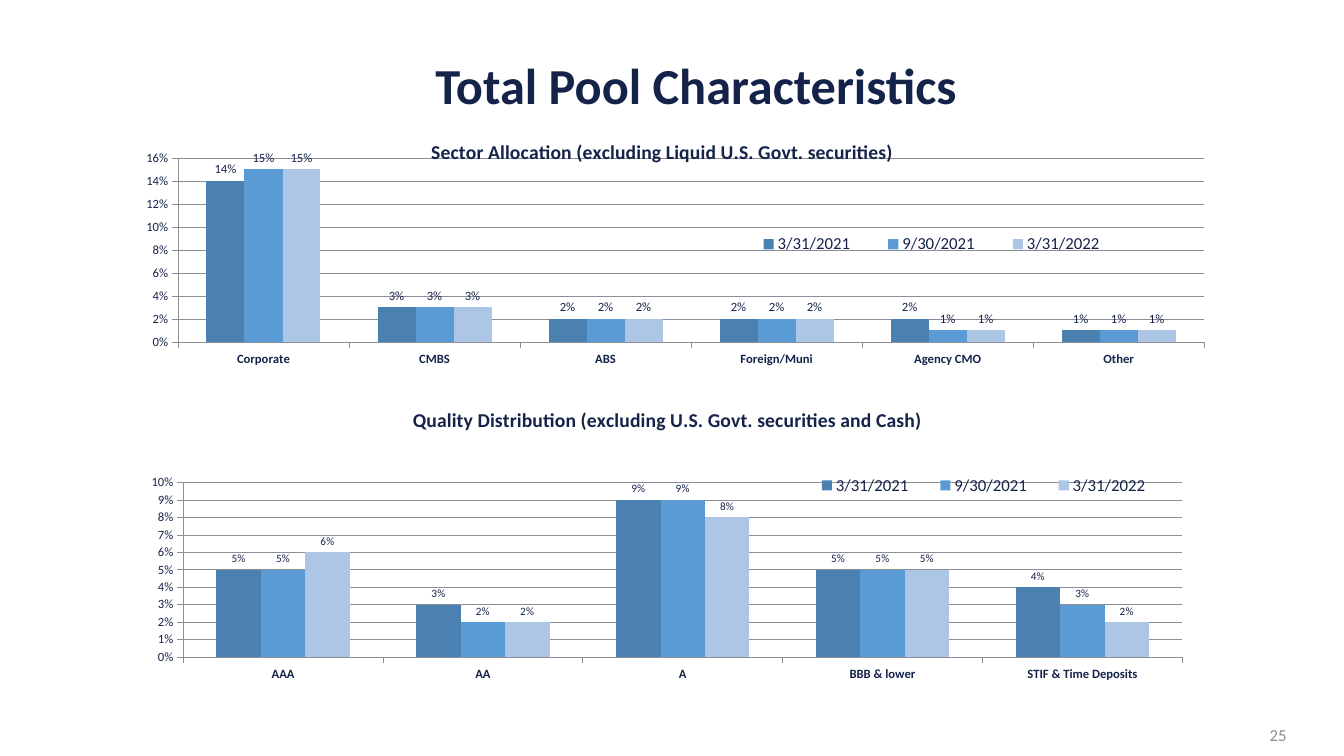
"""Build the Total Pool Characteristics slide with two clustered column charts."""
from dataclasses import dataclass

import pptx
import pptx.chart.data
import pptx.dml.color
import pptx.enum.chart
import pptx.enum.text
import pptx.oxml
import pptx.oxml.ns
import pptx.util

SLIDE_SIZE = (13.33, 7.5)
TITLE = {"text": "Total Pool Characteristics", "area": (15.6, 9.73, 72.39, 3.87)}
PAGE_NUMBER = {"text": "25", "area": (73.97, 94.53, 22.51, 5.33)}
DATES = ("3/31/2021", "9/30/2021", "3/31/2022")
LEGEND = pptx.enum.chart.XL_LEGEND_POSITION
CHARTS = [
    {
        "title": "Sector Allocation (excluding Liquid U.S. Govt. securities)",
        "area": (6.68, 15.87, 85.22, 39.6),
        "rows": {
            "Corporate": (0.14, 0.15, 0.15),
            "CMBS": (0.03, 0.03, 0.03),
            "ABS": (0.02, 0.02, 0.02),
            "Foreign/Muni": (0.02, 0.02, 0.02),
            "Agency CMO": (0.02, 0.01, 0.01),
            "Other": (0.01, 0.01, 0.01),
        },
        "scale": (0.16, 0.02),
        "label_size": 9,
        "legend": LEGEND.BOTTOM,
        "title_spot": (29.5, 5),
        "plot_spot": (7.7, 12.7, 89.6, 61.5),
        "legend_spot": (56, 37.5, 35, 8),
    },
    {
        "title": "Quality Distribution (excluding U.S. Govt. securities and Cash)",
        "area": (9.68, 51.33, 79.89, 39.6),
        "rows": {
            "AAA": (0.05, 0.05, 0.06),
            "AA": (0.03, 0.02, 0.02),
            "A": (0.09, 0.09, 0.08),
            "BBB & lower": (0.05, 0.05, 0.05),
            "STIF & Time Deposits": (0.04, 0.03, 0.02),
        },
        "scale": (0.1, 0.01),
        "label_size": 8,
        "legend": LEGEND.TOP,
        "title_spot": (26, 5),
        "plot_spot": (4.95, 31.6, 93.05, 58.3),
        "legend_spot": (62, 28.5, 35, 8),
    },
]


@dataclass(frozen=True)
class Theme:
    font: str = "Calibri"
    ink: str = "15234A"
    grey: str = "8C8D96"
    bars: tuple = ("4B81B1", "5B9BD5", "ADC6E5")
    title: int = 36
    chart_title: int = 14
    legend: int = 12
    axis: int = 9
    number: int = 12
    line: float = 0.5


THEME = Theme()


def rgb(value):
    return pptx.dml.color.RGBColor.from_string(value)


def place(area):
    """Turn percentages of the slide into lengths."""
    return [pptx.util.Inches(share / 100 * SLIDE_SIZE[i % 2]) for i, share in enumerate(area)]


def style_font(font, size, color=THEME.ink, bold=False):
    font.name, font.size, font.bold = THEME.font, pptx.util.Pt(size), bold
    font.color.rgb = rgb(color)


def style_line(line):
    line.color.rgb = rgb(THEME.grey)
    line.width = pptx.util.Pt(THEME.line)


def write(shape, text, align, size, color, bold=False):
    frame = shape.text_frame
    frame.word_wrap = True
    frame.auto_size = pptx.enum.text.MSO_AUTO_SIZE.NONE
    frame.vertical_anchor = pptx.enum.text.MSO_ANCHOR.MIDDLE
    para = frame.paragraphs[0]
    para.alignment = align
    span = para.add_run()
    span.text = text
    style_font(span.font, size, color, bold)
    return para


def set_layout(part, index, spot, inner=False):
    """Pin a chart part to percentages of the chart area."""
    for old in part.findall(pptx.oxml.ns.qn("c:layout")):
        part.remove(old)
    target = '<c:layoutTarget val="inner"/>' if inner else ""
    modes = "".join(f'<c:{axis}Mode val="edge"/>' for axis in "xy")
    sizes = "".join(f'<c:{name} val="{share / 100:.4f}"/>' for name, share in zip("xywh", spot))
    part.insert(index, pptx.oxml.parse_xml(
        f'<c:layout {pptx.oxml.ns.nsdecls("c")}>'
        f"<c:manualLayout>{target}{modes}{sizes}</c:manualLayout></c:layout>"))


def add_columns(page, content):
    data = pptx.chart.data.CategoryChartData(number_format="0%")
    data.categories = list(content["rows"])
    for date, values in zip(DATES, zip(*content["rows"].values())):
        data.add_series(date, values)
    kind = pptx.enum.chart.XL_CHART_TYPE.COLUMN_CLUSTERED
    chart = page.shapes.add_chart(kind, *place(content["area"]), data).chart
    style_font(chart.font, THEME.axis)

    chart.has_title = True
    span = chart.chart_title.text_frame.paragraphs[0].add_run()
    span.text = content["title"]
    style_font(span.font, THEME.chart_title, bold=True)

    chart.has_legend = True
    chart.legend.position = content["legend"]
    chart.legend.include_in_layout = False
    style_font(chart.legend.font, THEME.legend)

    for axis, bold in ((chart.category_axis, True), (chart.value_axis, False)):
        axis.major_tick_mark = pptx.enum.chart.XL_TICK_MARK.OUTSIDE
        style_font(axis.tick_labels.font, THEME.axis, bold=bold)
        style_line(axis.format.line)
    scale = chart.value_axis
    scale.minimum_scale = 0
    scale.maximum_scale, scale.major_unit = content["scale"]
    scale.tick_labels.number_format = "0%"
    scale.tick_labels.number_format_is_linked = False
    style_line(scale.major_gridlines.format.line)

    plot = chart.plots[0]
    plot.gap_width, plot.overlap, plot.vary_by_categories = 150, 0, False
    for series, color in zip(plot.series, THEME.bars):
        series.format.fill.solid()
        series.format.fill.fore_color.rgb = rgb(color)
        labels = series.data_labels
        labels.show_value = True
        labels.number_format, labels.number_format_is_linked = "0%", False
        labels.position = pptx.enum.chart.XL_LABEL_POSITION.OUTSIDE_END
        style_font(labels.font, content["label_size"])

    plot_area = chart.element.find(".//" + pptx.oxml.ns.qn("c:plotArea"))
    legend_part = chart.element.find(".//" + pptx.oxml.ns.qn("c:legend"))
    title_part = chart.element.find(".//" + pptx.oxml.ns.qn("c:title"))
    set_layout(plot_area, 0, content["plot_spot"], inner=True)
    set_layout(legend_part, 1, content["legend_spot"])
    set_layout(title_part, 1, content["title_spot"])


def main():
    deck = pptx.Presentation()
    deck.slide_width, deck.slide_height = map(pptx.util.Inches, SLIDE_SIZE)
    page = deck.slides.add_slide(deck.slide_layouts[5])
    align = pptx.enum.text.PP_ALIGN

    title = page.shapes.title
    title.left, title.top, title.width, title.height = place(TITLE["area"])
    para = write(title, TITLE["text"], align.CENTER, THEME.title, THEME.ink, bold=True)
    para.line_spacing = 0.9

    for content in CHARTS:
        add_columns(page, content)

    number = page.shapes.add_textbox(*place(PAGE_NUMBER["area"]))
    write(number, PAGE_NUMBER["text"], align.RIGHT, THEME.number, THEME.grey)
    deck.save("out.pptx")


if __name__ == "__main__":
    main()
